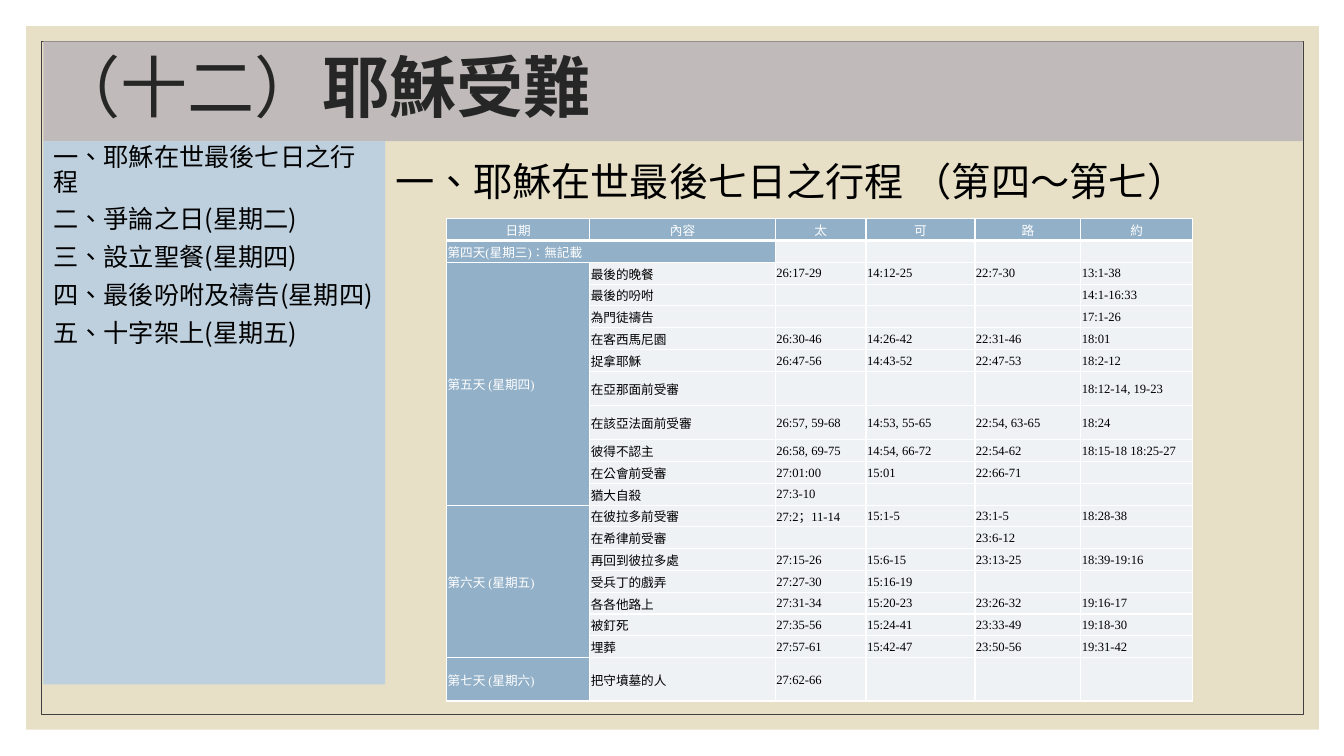
from lxml import etree
from pptx import Presentation
from pptx.dml.color import RGBColor
from pptx.enum.shapes import MSO_SHAPE
from pptx.enum.text import MSO_ANCHOR, PP_ALIGN
from pptx.oxml.ns import qn
from pptx.util import Inches, Pt

SAND = RGBColor(0xE7, 0xE0, 0xC7)
FRAME = RGBColor(0x40, 0x40, 0x40)
MAUVE = RGBColor(0xC0, 0xBA, 0xBA)
SKY = RGBColor(0xBE, 0xD0, 0xDE)
STEEL = RGBColor(0x92, 0xB0, 0xC8)
MIST = RGBColor(0xEE, 0xF2, 0xF5)
INK = RGBColor(0x26, 0x26, 0x26)
BLACK = RGBColor(0, 0, 0)
WHITE = RGBColor(0xFF, 0xFF, 0xFF)
SANS, SERIF = "Noto Sans CJK SC", "Times New Roman"

TOPICS = ["一、耶穌在世最後七日之行程", "二、爭論之日(星期二)", "三、設立聖餐(星期四)",
          "四、最後吩咐及禱告(星期四)", "五、十字架上(星期五)"]
HEADER = ["日期", "內容", "太", "可", "路", "約"]
DAYS = [
    ("第四天(星期三)：無記載", [["", "", "", "", ""]]),
    ("第五天 (星期四)", [
        ["最後的晚餐", "26:17-29", "14:12-25", "22:7-30", "13:1-38"],
        ["最後的吩咐", "", "", "", "14:1-16:33"],
        ["為門徒禱告", "", "", "", "17:1-26"],
        ["在客西馬尼園", "26:30-46", "14:26-42", "22:31-46", "18:01"],
        ["捉拿耶穌", "26:47-56", "14:43-52", "22:47-53", "18:2-12"],
        ["在亞那面前受審", "", "", "", "18:12-14, 19-23"],
        ["在該亞法面前受審", "26:57, 59-68", "14:53, 55-65", "22:54, 63-65", "18:24"],
        ["彼得不認主", "26:58, 69-75", "14:54, 66-72", "22:54-62", "18:15-18 18:25-27"],
        ["在公會前受審", "27:01:00", "15:01", "22:66-71", ""],
        ["猶大自殺", "27:3-10", "", "", ""]]),
    ("第六天 (星期五)", [
        ["在彼拉多前受審", "27:2；11-14", "15:1-5", "23:1-5", "18:28-38"],
        ["在希律前受審", "", "", "23:6-12", ""],
        ["再回到彼拉多處", "27:15-26", "15:6-15", "23:13-25", "18:39-19:16"],
        ["受兵丁的戲弄", "27:27-30", "15:16-19", "", ""],
        ["各各他路上", "27:31-34", "15:20-23", "23:26-32", "19:16-17"],
        ["被釘死", "27:35-56", "15:24-41", "23:33-49", "19:18-30"],
        ["埋葬", "27:57-61", "15:42-47", "23:50-56", "19:31-42"]]),
    ("第七天 (星期六)", [["把守墳墓的人", "27:62-66", "", "", ""]]),
]
COLUMNS = [1.42, 1.84, 0.9, 1.08, 1.05, 1.11]
TALL_ROWS = {7: 0.34, 8: 0.34, 19: 0.43}


def add_run(p, text, color, **formats):
    """Add a run in a Latin and an East Asian font."""
    r = p.add_run()
    r.text = text
    for key, value in formats.items():
        setattr(r.font, key, value)
    r.font.color.rgb = color
    rPr = r._r.get_or_add_rPr()
    rPr.set("lang", "zh-TW")
    etree.SubElement(rPr, qn("a:ea"), typeface=SANS)


def add_panel(s, box, fill=None, line=None):
    """Add a plain rectangle and return it."""
    sp = s.shapes.add_shape(MSO_SHAPE.RECTANGLE, *map(Inches, box))
    sp.shadow.inherit = False
    if fill is None:
        sp.fill.background()
    else:
        sp.fill.solid()
        sp.fill.fore_color.rgb = fill
    if line is None:
        sp.line.fill.background()
    else:
        sp.line.color.rgb = line
        sp.line.width = Pt(0.5)
    return sp


def add_text(sp, paragraphs, size, color, spacing, anchor=MSO_ANCHOR.TOP):
    """Fill a shape with paragraphs, each a list of (text, bold) runs."""
    tf = sp.text_frame
    tf.word_wrap = True
    tf.vertical_anchor = anchor
    for i, runs in enumerate(paragraphs):
        p = tf.add_paragraph() if i else tf.paragraphs[0]
        layout = {"alignment": PP_ALIGN.LEFT, "line_spacing": spacing,
                  "space_before": Pt(9 if i else 0)}
        for key, value in layout.items():
            setattr(p, key, value)
        for text, bold in runs:
            add_run(p, text, color, size=Pt(size), name=SANS, bold=bold)


def add_background(s, box):
    """Draw the sand panel and the thin frame inside it."""
    x, y, w, h = box
    add_panel(s, box, SAND)
    add_panel(s, (x + 0.15, y + 0.15, w - 0.3, h - 0.3), line=FRAME)


def add_title(s, box):
    """Draw the title band."""
    add_text(add_panel(s, box, MAUVE), [[("（十二）", False), ("耶穌受難", True)]],
             48, INK, 0.9, MSO_ANCHOR.MIDDLE)


def add_topics(s, box):
    """Draw the list of topics in the side panel."""
    add_text(add_panel(s, box, SKY), [[(topic, False)] for topic in TOPICS],
             18, BLACK, 0.83)


def add_heading(s, box):
    """Write the heading above the table."""
    sp = s.shapes.add_textbox(*map(Inches, box))
    add_text(sp, [[("一、耶穌在世最後七日之行程 （第四～第七）", False)]], 28, BLACK, 0.9)


def add_borders(cell, bottom):
    """Give a cell white borders with the given bottom width in points."""
    tcPr = cell._tc.get_or_add_tcPr()
    for i, (side, width) in enumerate(zip("LRTB", (1, 1, 1, bottom))):
        ln = etree.Element(qn(f"a:ln{side}"), w=str(Pt(width)))
        fill = etree.SubElement(ln, qn("a:solidFill"))
        etree.SubElement(fill, qn("a:srgbClr"), val=str(WHITE))
        tcPr.insert(i, ln)


def style_cell(cell, text, dark, header):
    """Fill, frame and write one table cell."""
    cell.fill.solid()
    cell.fill.fore_color.rgb = STEEL if dark else MIST
    add_borders(cell, 3 if header else 1)
    layout = {"margin_left": Inches(0.01), "margin_top": Inches(0.01),
              "margin_right": Inches(0.01), "margin_bottom": 0,
              "vertical_anchor": MSO_ANCHOR.MIDDLE}
    for key, value in layout.items():
        setattr(cell, key, value)
    p = cell.text_frame.paragraphs[0]
    p.alignment = PP_ALIGN.CENTER if header else PP_ALIGN.LEFT
    if text:
        add_run(p, text, WHITE if dark else BLACK, size=Pt(9), name=SERIF)
    else:
        etree.SubElement(p._p, qn("a:endParaRPr"), sz="900")


def add_schedule(s, box):
    """Draw the table of days, events and Gospel passages."""
    rows = [HEADER]
    merges = []
    for day, events in DAYS:
        first = len(rows)
        rows += [["" if i else day] + event for i, event in enumerate(events)]
        merges.append((first, len(rows) - 1, 0 if events[0][0] else 1))
    table = s.shapes.add_table(len(rows), len(HEADER), *map(Inches, box)).table
    for column, width in zip(table.columns, COLUMNS):
        column.width = Inches(width)
    plain = (box[3] - sum(TALL_ROWS.values())) / (len(rows) - len(TALL_ROWS))
    for i, row in enumerate(rows):
        table.rows[i].height = Inches(TALL_ROWS.get(i, plain))
        for j, text in enumerate(row):
            style_cell(table.cell(i, j), text, i == 0 or j == 0, i == 0)
    for first, last, column in merges:
        if last > first or column:
            table.cell(first, 0).merge(table.cell(last, column))


def main():
    """Build the slide and save it."""
    prs = Presentation()
    prs.slide_width, prs.slide_height = Inches(13.33), Inches(7.5)
    s = prs.slides.add_slide(prs.slide_layouts[6])
    add_background(s, (0.26, 0.26, 12.82, 6.98))
    add_title(s, (0.43, 0.41, 12.49, 0.99))
    add_topics(s, (0.43, 1.4, 3.39, 5.39))
    add_heading(s, (3.82, 1.56, 8.87, 5.23))
    add_schedule(s, (4.43, 2.17, 7.39, 4.79))
    prs.save("out.pptx")


if __name__ == "__main__":
    main()
